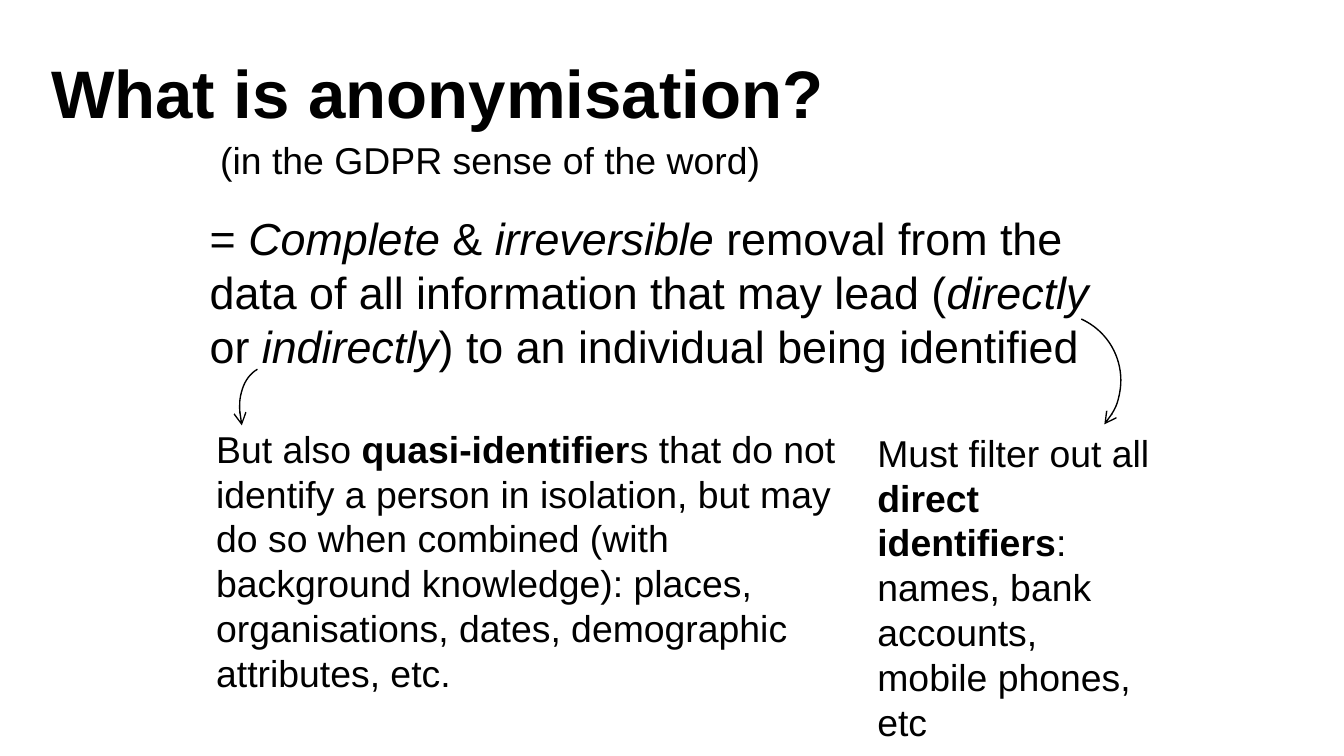
"""Build a slide that defines anonymisation in the GDPR sense."""
from lxml.etree import SubElement
from pptx import Presentation
from pptx.dml.color import RGBColor
from pptx.enum.shapes import MSO_SHAPE
from pptx.enum.text import MSO_ANCHOR, MSO_AUTO_SIZE, PP_ALIGN
from pptx.oxml.ns import qn
from pptx.util import Inches, Pt

COLORS = {"text": "000000", "line": "000000", "background": "FFFFFF"}
FONT = "Arial"


def color(name):
    return RGBColor.from_string(COLORS[name])


def place(sp, left, top, width, height):
    sp.left, sp.top = Inches(left), Inches(top)
    sp.width, sp.height = Inches(width), Inches(height)


def add_runs(p, size, runs):
    for text, style in runs:
        r = p.add_run()
        r.text = text
        r.font.name = FONT
        r.font.size = Pt(size)
        r.font.color.rgb = color("text")
        r.font.bold = style == "bold"
        r.font.italic = style == "italic"


def fill_placeholder(sp, box, size, runs, anchor, line_spacing):
    place(sp, *box)
    tf = sp.text_frame
    tf.word_wrap = True
    tf.auto_size = MSO_AUTO_SIZE.NONE
    tf.vertical_anchor = anchor
    p = tf.paragraphs[0]
    p.alignment = PP_ALIGN.LEFT
    p.line_spacing = line_spacing
    p.space_before = Pt(0)
    pPr = p._p.get_or_add_pPr()
    pPr.set("marL", "0")
    pPr.set("indent", "0")
    SubElement(pPr, qn("a:buNone"))
    add_runs(p, size, runs)


def add_note(s, box, runs):
    sp = s.shapes.add_textbox(*map(Inches, box))
    tf = sp.text_frame
    tf.word_wrap = True
    tf.auto_size = MSO_AUTO_SIZE.SHAPE_TO_FIT_TEXT
    add_runs(tf.paragraphs[0], 20, runs)


def add_arc_arrow(s, box, rotation, start, end_tag, flipped=False):
    sp = s.shapes.add_shape(MSO_SHAPE.ARC, *map(Inches, box))
    sp.shadow.inherit = False
    sp.rotation = rotation
    sp.adjustments[0] = start
    sp.adjustments[1] = 0
    sp.fill.background()
    sp.line.color.rgb = color("line")
    sp.line.width = Pt(0.75)
    SubElement(sp.line._get_or_add_ln(), qn(end_tag), type="arrow")
    if flipped:
        xfrm = sp._element.spPr.find(qn("a:xfrm"))
        xfrm.set("flipH", "1")
        xfrm.set("flipV", "1")


def main():
    prs = Presentation()
    prs.slide_width = Inches(10)
    prs.slide_height = prs.slide_width * 9 // 16
    s = prs.slides.add_slide(prs.slide_layouts[1])
    s.background.fill.solid()
    s.background.fill.fore_color.rgb = color("background")

    fill_placeholder(s.shapes.title, (0.28, 0.21, 9.45, 0.83), 36,
                     [("What is anonymisation?", "bold")], MSO_ANCHOR.BOTTOM, 0.9)
    fill_placeholder(s.placeholders[1], (1.46, 1.52, 7.09, 3.37), 24, [
        ("= ", None),
        ("Complete", "italic"),
        (" & ", None),
        ("irreversible", "italic"),
        (" removal from the data of all information that may lead (", None),
        ("directly", "italic"),
        (" or ", None),
        ("indirectly", "italic"),
        (") to an individual being identified", None),
    ], MSO_ANCHOR.TOP, 1.0)
    add_note(s, (1.54, 0.97, 4.5, 0.44), [("(in the GDPR sense of the word)", None)])

    add_arc_arrow(s, (7.34, 2.33, 1, 1), 41, 152, "a:tailEnd")
    add_note(s, (6.43, 3.15, 2.26, 2.46), [
        ("Must filter out all ", None),
        ("direct identifiers", "bold"),
        (": names, bank accounts, mobile phones, etc", None),
    ])

    add_arc_arrow(s, (1.64, 2.88, 1.1, 0.69), 60.1, 185.14, "a:headEnd", flipped=True)
    add_note(s, (1.51, 3.12, 4.81, 2.12), [
        ("But also ", None),
        ("quasi-identifier", "bold"),
        ("s that do not identify a person in isolation, but may do so when combined "
         "(with background knowledge): places, organisations, dates, demographic "
         "attributes, etc.", None),
    ])
    prs.save("out.pptx")


if __name__ == "__main__":
    main()
